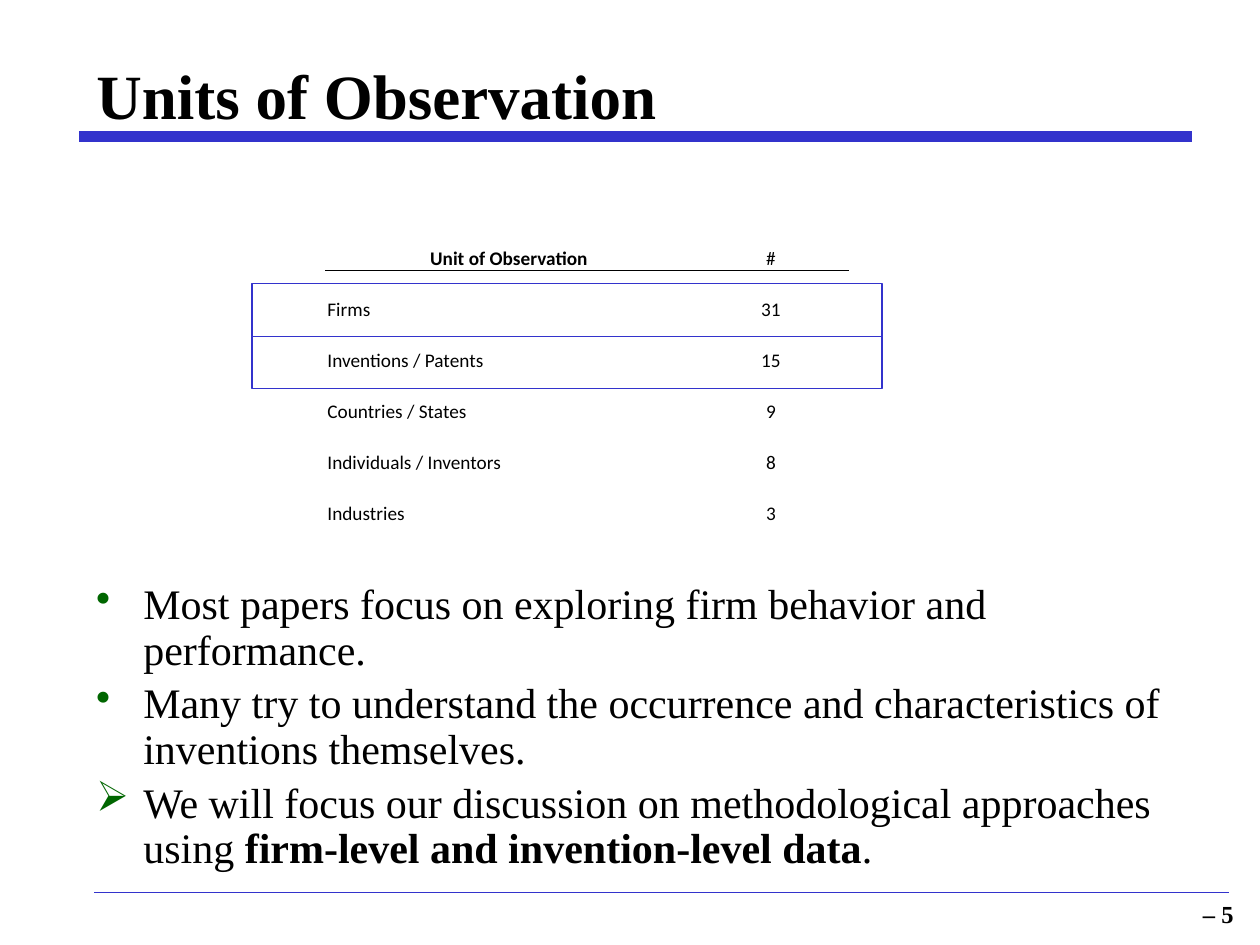
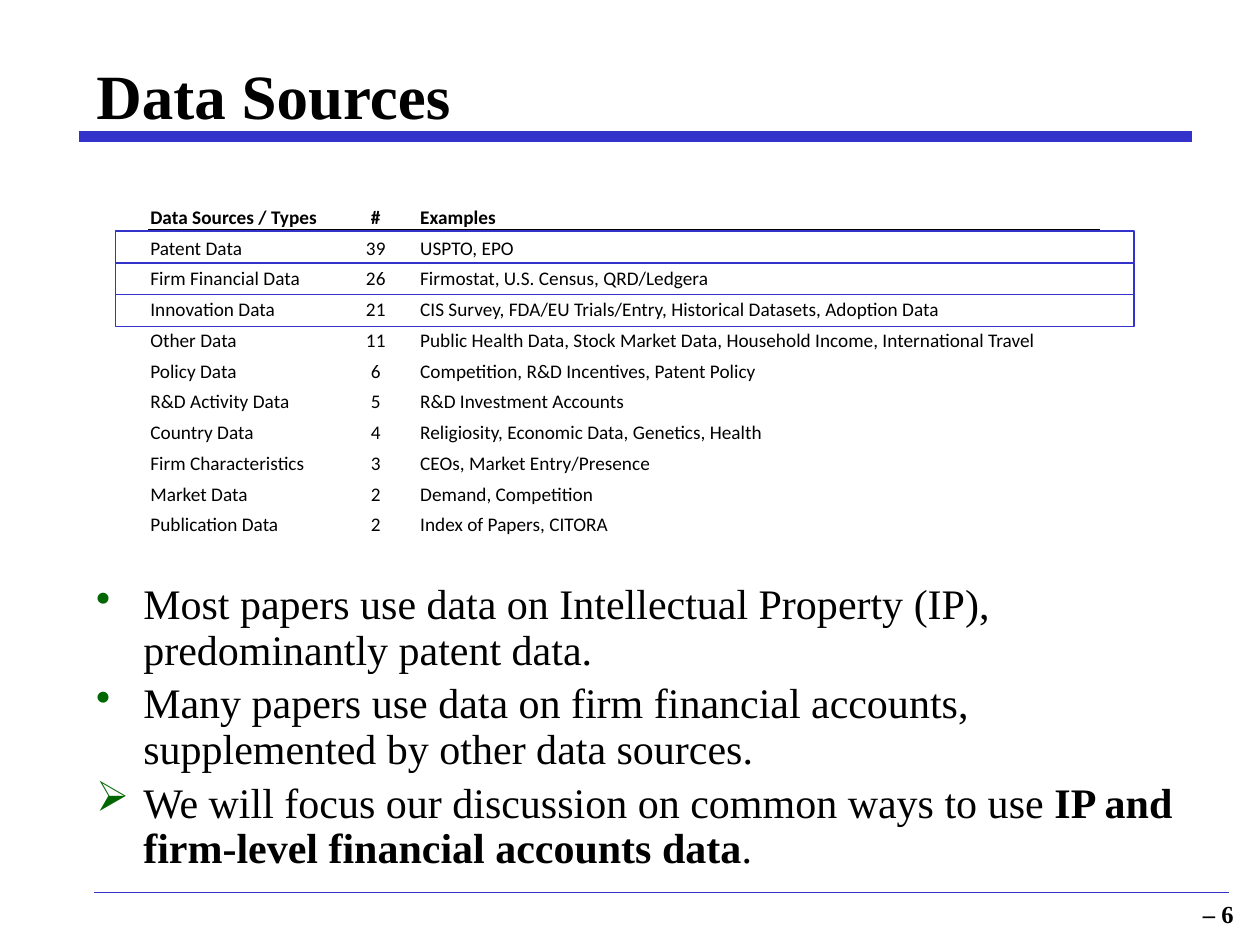
"""Build two slides that sum up the units of observation and the data sources."""
from dataclasses import dataclass

import pptx
import pptx.dml.color
import pptx.enum.shapes
import pptx.enum.text
import pptx.oxml
import pptx.oxml.ns
import pptx.util
from lxml import etree

Cm = pptx.util.Cm
Pt = pptx.util.Pt
qn = pptx.oxml.ns.qn
ALIGN = pptx.enum.text.PP_ALIGN
ANCHOR = pptx.enum.text.MSO_ANCHOR

COLORS = {"ink": "000000", "paper": "FFFFFF", "blue": "3333CC", "green": "006600"}
SERIF, SANS = "Times New Roman", "Calibri"
LEFT, WIDTH = 1.69, 22.23
TOP = 3.39


@dataclass
class Point:
    """A bullet whose text may close with a bold phrase and a full stop."""
    text: str
    bold: str = ""
    mark: str = "•"


@dataclass
class Grid:
    """A table with a blank column on each side and blank rows around it."""
    left: float
    cols: list[float]
    high: float
    rows: list[tuple[str, ...]]
    strong: tuple[int, ...]
    center: tuple[int, ...]
    mid: tuple[int, ...]
    tail: int = 0


@dataclass
class Frames:
    """A stack of equal outlines around the leading rows."""
    left: float
    top: float
    width: float
    high: float
    count: int


@dataclass
class Page:
    """The content of one slide."""
    number: int
    title: str
    grid: Grid
    frames: Frames
    points: list[Point]


PAGES = [
    Page(
        5, "Units of Observation",
        Grid(3.39, [3.18, 7.38, 3.18, 3.18], 1.03, [
            ("Unit of Observation", "#"),
            ("Firms", "31"),
            ("Inventions / Patents", "15"),
            ("Countries / States", "9"),
            ("Individuals / Inventors", "8"),
            ("Industries", "3"),
        ], strong=(0,), center=(0, 1), mid=(1,), tail=1),
        Frames(5.08, 5.72, 12.7, 1.06, 2),
        [
            Point("Most papers focus on exploring firm behavior and performance."),
            Point("Many try to understand the occurrence and characteristics of "
                  "inventions themselves."),
            Point("We will focus our discussion on methodological approaches using ",
                  "firm-level and invention-level data", "➢"),
        ],
    ),
    Page(
        6, "Data Sources",
        Grid(1.27, [1.73, 3.71, 1.73, 13.74, 1.73], 0.62, [
            ("Data Sources / Types", "#", "Examples"),
            ("Patent Data", "39", "USPTO, EPO"),
            ("Firm Financial Data", "26", "Firmostat, U.S. Census, QRD/Ledgera"),
            ("Innovation Data", "21", "CIS Survey, FDA/EU Trials/Entry, "
             "Historical Datasets, Adoption Data"),
            ("Other Data", "11", "Public Health Data, Stock Market Data, "
             "Household Income, International Travel"),
            ("Policy Data", "6", "Competition, R&D Incentives, Patent Policy"),
            ("R&D Activity Data", "5", "R&D Investment Accounts"),
            ("Country Data", "4", "Religiosity, Economic Data, Genetics, Health"),
            ("Firm Characteristics", "3", "CEOs, Market Entry/Presence"),
            ("Market Data", "2", "Demand, Competition"),
            ("Publication Data", "2", "Index of Papers, CITORA"),
        ], strong=(0, 1, 2), center=(1,), mid=(1,)),
        Frames(2.33, 4.66, 20.53, 0.64, 3),
        [
            Point("Most papers use data on Intellectual Property (IP), "
                  "predominantly patent data."),
            Point("Many papers use data on firm financial accounts, "
                  "supplemented by other data sources."),
            Point("We will focus our discussion on common ways to use ",
                  "IP and firm-level financial accounts data", "➢"),
        ],
    ),
]


def tint(name: str) -> pptx.dml.color.RGBColor:
    """Return the named colour."""
    return pptx.dml.color.RGBColor.from_string(COLORS[name])


def style(run, size: float, face: str = SERIF, bold: bool = False) -> None:
    """Format one run."""
    run.font.size, run.font.name, run.font.bold = Pt(size), face, bold
    run.font.color.rgb = tint("ink")


def rule(slide, start: float, end: float, y: float, weight: float) -> None:
    """Draw a level blue line."""
    line = slide.shapes.add_connector(
        pptx.enum.shapes.MSO_CONNECTOR.STRAIGHT, Cm(start), Cm(y), Cm(end), Cm(y))
    line.line.color.rgb, line.line.width = tint("blue"), Pt(weight)
    props = line._element.spPr
    props.find(qn("a:ln")).set("cap", "sq")
    etree.SubElement(props, qn("a:effectLst"))


def base(slide, page: Page) -> None:
    """Add the title, both lines and the page number."""
    rule(slide, LEFT, LEFT + WIDTH, 2.75, 6)
    rule(slide, 1.9, 24.77, 17.99, 0.75)
    title = slide.shapes.title
    title.left, title.top, title.width, title.height = map(Cm, (LEFT, 1.06, WIDTH, 1.69))
    frame = title.text_frame
    frame.text = page.title
    frame.vertical_anchor = ANCHOR.MIDDLE
    frame.auto_size = pptx.enum.text.MSO_AUTO_SIZE.NONE
    frame.paragraphs[0].alignment = ALIGN.LEFT
    style(frame.paragraphs[0].runs[0], 36, bold=True)
    box = slide.shapes.add_textbox(Cm(23.67), Cm(17.99), Cm(1.45), Cm(0.84))
    frame = box.text_frame
    frame.text = f"– {page.number}"
    frame.word_wrap = False
    frame.auto_size = pptx.enum.text.MSO_AUTO_SIZE.SHAPE_TO_FIT_TEXT
    frame.paragraphs[0].alignment = ALIGN.RIGHT
    style(frame.paragraphs[0].runs[0], 14, bold=True)


def edge(cell, side: str) -> None:
    """Draw a thin black border on one side of a cell."""
    cell._tc.get_or_add_tcPr().insert(0, pptx.oxml.parse_xml(
        f'<a:{side} {pptx.oxml.ns.nsdecls("a")} w="6350"><a:solidFill>'
        f'<a:srgbClr val="{COLORS["ink"]}"/></a:solidFill></a:{side}>'))


def blank(cell) -> None:
    """Give an empty cell a white fill, thin margins and a small font."""
    cell.fill.solid()
    cell.fill.fore_color.rgb = tint("paper")
    cell.margin_left = cell.margin_right = cell.margin_top = Cm(0.03)
    cell.margin_bottom = Cm(0)
    cell.vertical_anchor = ANCHOR.BOTTOM
    etree.SubElement(cell.text_frame.paragraphs[0]._p, qn("a:endParaRPr"), sz="1100")


def table(slide, grid: Grid) -> None:
    """Add the table and fill its inner cells."""
    count = len(grid.rows) + 1 + grid.tail
    body = slide.shapes.add_table(
        count, len(grid.cols), Cm(grid.left), Cm(TOP),
        Cm(sum(grid.cols)), Cm(grid.high * count)).table
    body.first_row = body.horz_banding = False
    for col, width in zip(body.columns, grid.cols):
        col.width = Cm(width)
    for row in body.rows:
        row.height = Cm(grid.high)
    for cell in body.iter_cells():
        blank(cell)
    for y, row in enumerate(grid.rows):
        for x, text in enumerate(row):
            cell = body.cell(y + 1, x + 1)
            cell.text_frame.text = text
            para = cell.text_frame.paragraphs[0]
            middle = grid.mid if y else grid.center
            para.alignment = ALIGN.CENTER if x in middle else ALIGN.LEFT
            style(para.runs[0], 11, SANS, y == 0 and x in grid.strong)
            if y < 2:
                edge(cell, "lnT" if y else "lnB")


def outline(slide, frames: Frames) -> None:
    """Stack the blue outlines."""
    for step in range(frames.count):
        box = slide.shapes.add_shape(
            pptx.enum.shapes.MSO_SHAPE.RECTANGLE, Cm(frames.left),
            Cm(frames.top + step * frames.high), Cm(frames.width), Cm(frames.high))
        box.shadow.inherit = False
        box.fill.background()
        box.line.color.rgb, box.line.width = tint("blue"), Pt(0.75)


def bullet(para, mark: str) -> None:
    """Give a paragraph a green bullet and a hanging indent."""
    props = para._p.get_or_add_pPr()
    props.set("marL", str(Cm(0.95)))
    props.set("indent", str(-Cm(0.95)))
    color = etree.SubElement(props, qn("a:buClr"))
    etree.SubElement(color, qn("a:srgbClr"), val=COLORS["green"])
    etree.SubElement(props, qn("a:buChar"), char=mark)


def notes(slide, points: list[Point]) -> None:
    """Write the bullets below the table."""
    box = slide.shapes.add_textbox(Cm(LEFT), Cm(11.64), Cm(WIDTH), Cm(5.93))
    frame = box.text_frame
    frame.word_wrap = True
    for index, point in enumerate(points):
        para = frame.add_paragraph() if index else frame.paragraphs[0]
        bullet(para, point.mark)
        para.line_spacing = 0.9
        para.space_before = Pt(4.8 if index else 0)
        para.text = point.text
        if point.bold:
            para.add_run().text = point.bold
            para.add_run().text = "."
        for run in para.runs:
            style(run, 24, bold=run.text == point.bold)


def main() -> None:
    """Build and save the deck."""
    deck = pptx.Presentation()
    deck.slide_width, deck.slide_height = Cm(25.4), Cm(19.05)
    for page in PAGES:
        slide = deck.slides.add_slide(deck.slide_layouts[5])
        base(slide, page)
        notes(slide, page.points)
        table(slide, page.grid)
        outline(slide, page.frames)
    deck.save("out.pptx")


if __name__ == "__main__":
    main()
